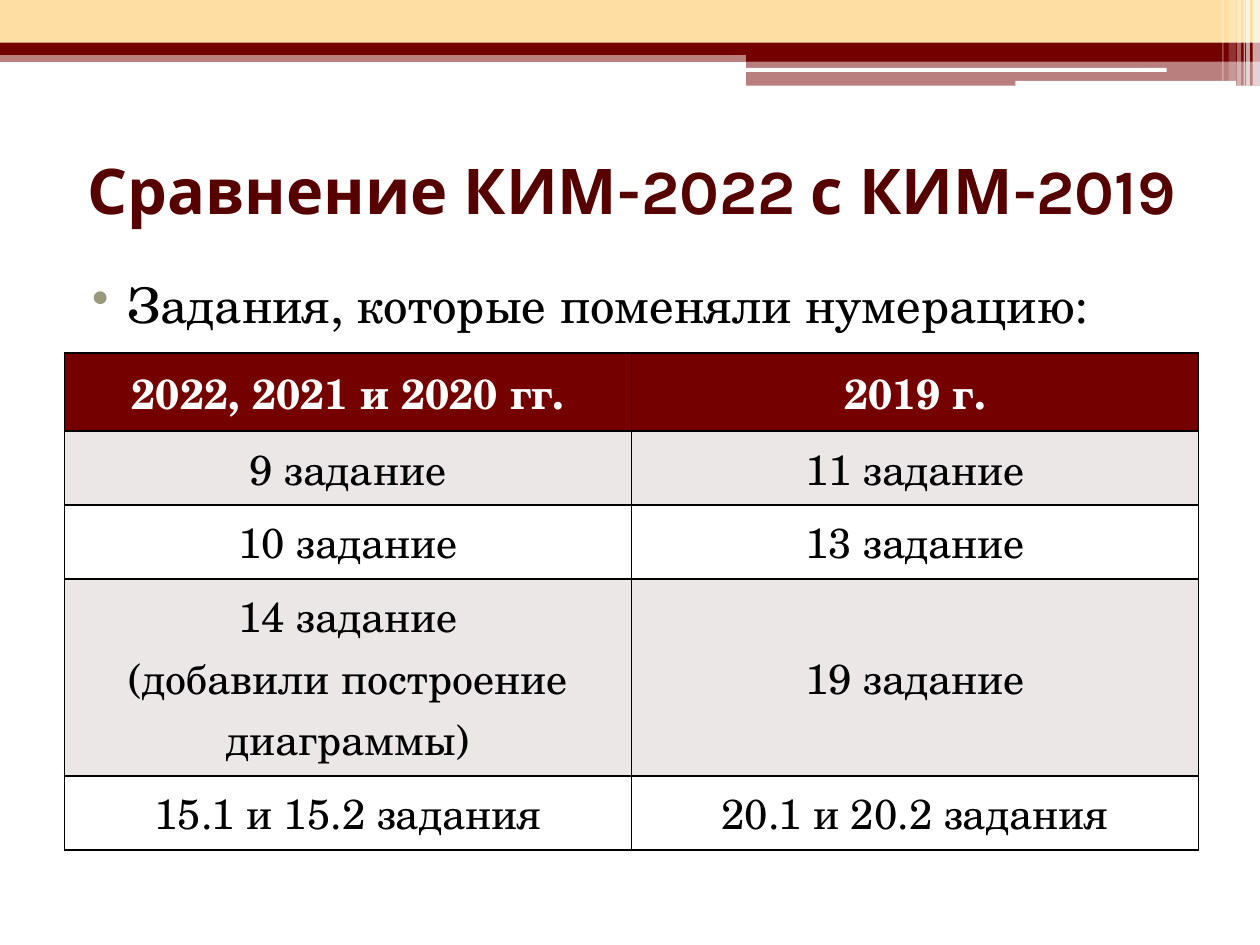
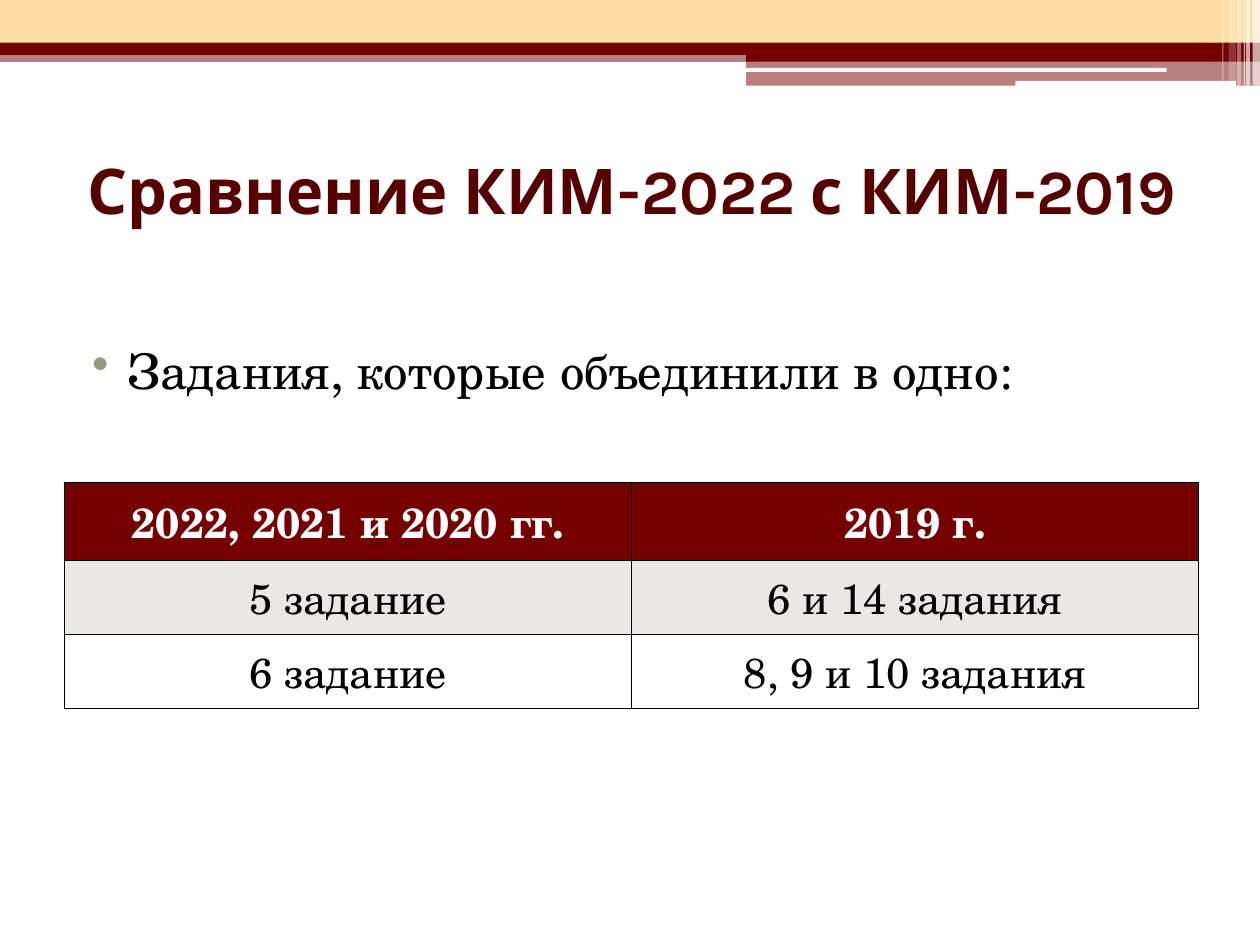
from lxml import etree
from pptx import Presentation
from pptx.dml.color import RGBColor
from pptx.enum import shapes, text
from pptx.oxml import ns
from pptx.util import Cm, Pt

CREAM, MAROON, WINE = "FFDEA4", "740000", "570000"
WHITE, BLACK, GREY, OLIVE = "FFFFFF", "000000", "EBE7E7", "99987F"
SERIF = "TeX Gyre Schola"

TITLE_FONT = {"name": "Karla", "size": Pt(36), "bold": True}
BODY_FONT = {"name": SERIF, "size": Pt(28), "bold": False}
HEAD_FONT = {"name": SERIF, "size": Pt(24), "bold": True}
CELL_FONT = {**HEAD_FONT, "bold": False}

SLIDE_W, SLIDE_H = 25.4, 19.05
LEFT, WIDTH = 1.3, 22.86
HEAD_H, ROW_H, EXTRA_LINE = 1.57, 1.49, 1.24

# left, top, width, height, colour, opacity in percent
BANDS = [
    (0, 1.02, SLIDE_W, 0.23, MAROON, 50),
    (0, 0, SLIDE_W, 0.86, CREAM, 100),
    (0, 0.86, SLIDE_W, 0.25, MAROON, 100),
    (15.04, 0.99, 10.36, 0.25, MAROON, 100),
    (15.04, 1.22, 10.36, 0.51, MAROON, 50),
]
SLOTS = [(15.01, 1.37, 8.51, 0.08), (20.47, 1.63, 4.45, 0.1)]
# left, width, height, opacity in percent
STRIPES = [
    (25.25, 0.15, 1.73, 65),
    (25.12, 0.08, 1.73, 65),
    (25.07, 0.03, 1.73, 60),
    (24.94, 0.08, 1.73, 40),
    (24.77, 0.15, 1.63, 20),
    (24.64, 0.03, 1.63, 30),
]

TITLE = "Сравнение КИМ-2022 с КИМ-2019"
COLUMNS = ("2022, 2021 и 2020 гг.", "2019 г.")
# Extra lines a row needs beyond its first are given after its two texts
SLIDES = [
    {
        "lead": "Задания, которые поменяли нумерацию:",
        "lead_drop": 0,
        "table_top": 7.12,
        "rows": [
            ("9 задание", "11 задание", 0),
            ("10 задание", "13 задание", 0),
            ("14 задание\n(добавили построение диаграммы)", "19 задание", 2),
            ("15.1 и 15.2 задания", "20.1 и 20.2 задания", 0),
        ],
    },
    {
        "lead": "Задания, которые объединили в одно:",
        "lead_drop": 1.33,
        "table_top": 9.73,
        "rows": [
            ("5 задание", "6 и 14 задания", 0),
            ("6 задание", "8, 9 и 10 задания", 0),
        ],
    },
]


def paint(target, colour):
    """Give a solid colour to a fill."""
    target.solid()
    target.fore_color.rgb = RGBColor.from_string(colour)


def apply(target, values):
    for name, value in values.items():
        setattr(target, name, value)


def add_child(parent, tag, **attrs):
    return etree.SubElement(parent, ns.qn(tag), attrs)


def write(tf, content, font, colour, align):
    """Fill a text frame, one paragraph for each line of content."""
    tf.text = content
    for p in tf.paragraphs:
        p.alignment = align
        for r in p.runs:
            apply(r.font, font)
            paint(r.font.fill, colour)


def add_block(s, kind, box, colour, opacity=100):
    sp = s.shapes.add_shape(kind, *map(Cm, box))
    sp.shadow.inherit = False
    sp.line.fill.background()
    paint(sp.fill, colour)
    if opacity < 100:
        clr = sp._element.spPr.find(".//" + ns.qn("a:srgbClr"))
        add_child(clr, "a:alpha", val=str(opacity * 1000))


def add_header(s):
    """Draw the bands, slots and stripes along the top edge."""
    rect = shapes.MSO_SHAPE.RECTANGLE
    for *box, colour, opacity in BANDS:
        add_block(s, rect, box, colour, opacity)
    for box in SLOTS:
        add_block(s, shapes.MSO_SHAPE.ROUNDED_RECTANGLE, box, WHITE)
    for left, width, height, opacity in STRIPES:
        add_block(s, rect, (left, 0, width, height), WHITE, opacity)


def place_title(s, box):
    sp = s.shapes.title
    apply(sp, dict(zip(("left", "top", "width", "height"), map(Cm, box))))
    write(sp.text_frame, TITLE, TITLE_FONT, WINE, text.PP_ALIGN.CENTER)
    apply(sp.text_frame, {
        "word_wrap": True,
        "auto_size": text.MSO_AUTO_SIZE.NONE,
        "vertical_anchor": text.MSO_ANCHOR.MIDDLE,
    })


def add_lead(s, box, content, drop):
    """Add the bulleted line, lowered by drop inside its box."""
    tf = s.shapes.add_textbox(*map(Cm, box)).text_frame
    apply(tf, {"word_wrap": True, "margin_top": Cm(0.13 + drop)})
    write(tf, content, BODY_FONT, BLACK, text.PP_ALIGN.JUSTIFY)
    p = tf.paragraphs[0]
    p.space_before = Pt(3)
    pPr = p._p.get_or_add_pPr()
    pPr.set("marL", str(Cm(1.02)))
    pPr.set("indent", str(Cm(-0.71)))
    add_child(add_child(pPr, "a:buClr"), "a:srgbClr", val=OLIVE)
    add_child(pPr, "a:buChar", char="•")


def add_borders(cell):
    tcPr = cell._tc.get_or_add_tcPr()
    for side in "LRTB":
        ln = add_child(tcPr, f"a:ln{side}", w=str(Pt(1)))
        add_child(add_child(ln, "a:solidFill"), "a:srgbClr", val=BLACK)


def format_cell(cell, content, font, colour, fill):
    add_borders(cell)
    paint(cell.fill, fill)
    cell.vertical_anchor = text.MSO_ANCHOR.MIDDLE
    write(cell.text_frame, content, font, colour, text.PP_ALIGN.CENTER)


def add_comparison(s, left, top, width, rows):
    heights = [HEAD_H] + [ROW_H + EXTRA_LINE * extra for *_, extra in rows]
    box = map(Cm, (left, top, width, sum(heights)))
    table = s.shapes.add_table(len(heights), len(COLUMNS), *box).table
    for row, height in zip(table.rows, heights):
        row.height = Cm(height)
    for c, heading in enumerate(COLUMNS):
        format_cell(table.cell(0, c), heading, HEAD_FONT, WHITE, MAROON)
        for r, row in enumerate(rows, 1):
            fill = GREY if r % 2 else WHITE
            format_cell(table.cell(r, c), row[c], CELL_FONT, BLACK, fill)


def add_comparison_slide(prs, lead, lead_drop, table_top, rows):
    s = prs.slides.add_slide(prs.slide_layouts[5])
    add_header(s)
    place_title(s, (LEFT, 2.34, WIDTH, 2.97))
    add_lead(s, (LEFT, 5.41, WIDTH, 12.01), lead, lead_drop)
    add_comparison(s, LEFT, table_top, WIDTH, rows)


def main():
    prs = Presentation()
    apply(prs, {"slide_width": Cm(SLIDE_W), "slide_height": Cm(SLIDE_H)})
    for content in SLIDES:
        add_comparison_slide(prs, **content)
    prs.save("out.pptx")


if __name__ == "__main__":
    main()
